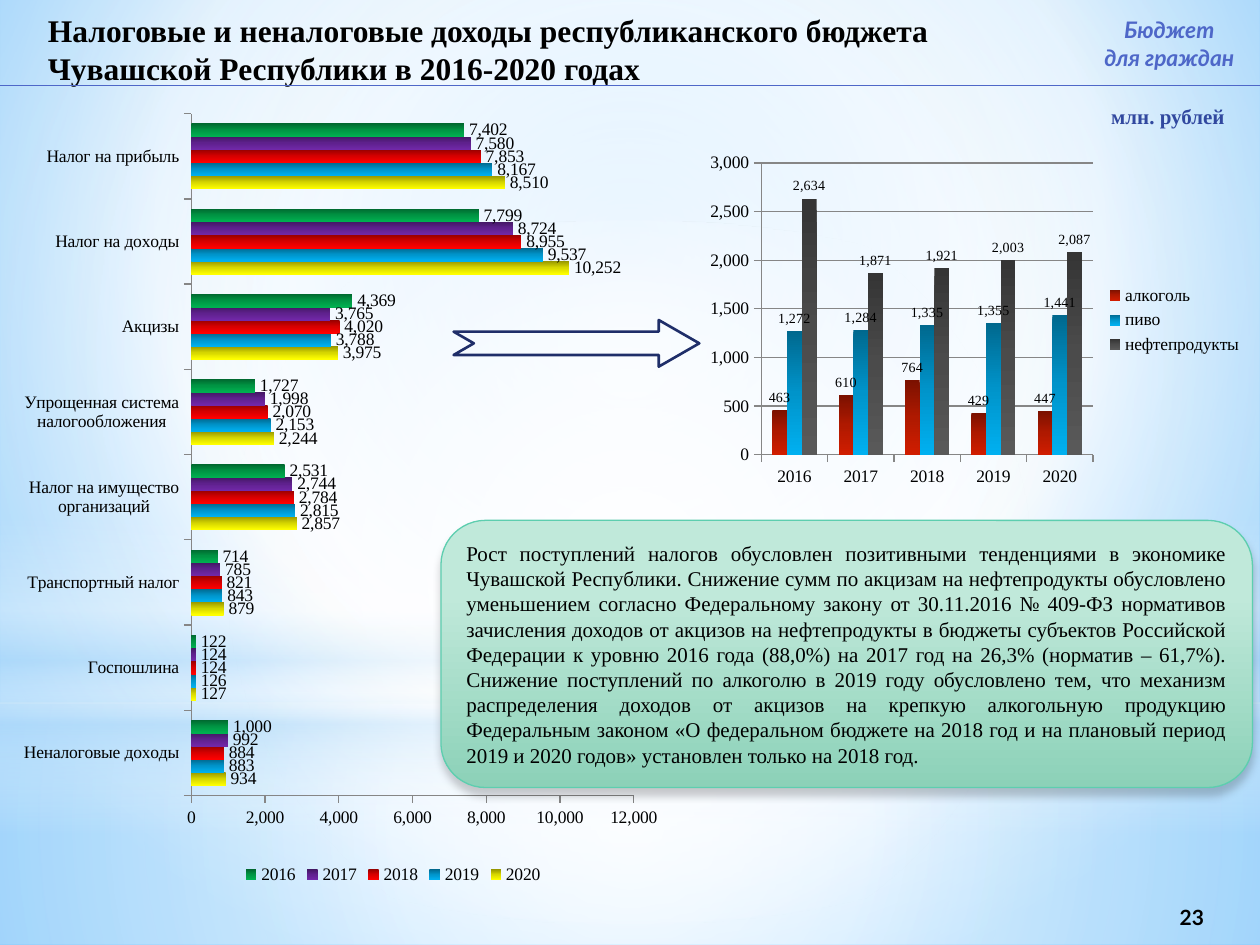
from lxml.etree import SubElement
from pptx import Presentation
from pptx.chart.data import CategoryChartData
from pptx.dml.color import RGBColor
from pptx.enum.chart import XL_CHART_TYPE, XL_LABEL_POSITION, XL_LEGEND_POSITION, XL_TICK_MARK
from pptx.enum.shapes import MSO_CONNECTOR, MSO_SHAPE
from pptx.enum.text import MSO_ANCHOR, MSO_AUTO_SIZE, PP_ALIGN
from pptx.oxml import parse_xml
from pptx.oxml.ns import nsdecls, qn
from pptx.util import Inches, Pt

BLACK = RGBColor(0x00, 0x00, 0x00)
WHITE = RGBColor(0xFF, 0xFF, 0xFF)
GRAY = RGBColor(0x86, 0x86, 0x86)
INDIGO = RGBColor(0x4E, 0x67, 0xC8)
NAVY = RGBColor(0x1F, 0x2E, 0x69)
UNIT_BLUE = RGBColor(0x31, 0x48, 0x9F)
PALE_BLUE = RGBColor(0xB4, 0xDC, 0xFA)
SKY = RGBColor(0x9E, 0xD5, 0xFF)
DEEP_SKY = RGBColor(0x5B, 0xB9, 0xFF)
MINT = RGBColor(0xC0, 0xE9, 0xDA)
DARK_MINT = RGBColor(0x8C, 0xD1, 0xB8)
MINT_LINE = RGBColor(0x5D, 0xCE, 0xAF)
YELLOW = [RGBColor(0x97, 0x97, 0x00), RGBColor(0xD7, 0xD7, 0x00), RGBColor(0xFF, 0xFF, 0x00)]
BLUE = [RGBColor(0x00, 0x68, 0x8E), RGBColor(0x00, 0x94, 0xCA), RGBColor(0x00, 0xB0, 0xF0)]
RED = [RGBColor(0x97, 0x00, 0x00), RGBColor(0xD7, 0x00, 0x00), RGBColor(0xFF, 0x00, 0x00)]
PURPLE = [RGBColor(0x43, 0x17, 0x64), RGBColor(0x5F, 0x21, 0x8E), RGBColor(0x71, 0x28, 0xA8)]
GREEN = [RGBColor(0x00, 0x68, 0x2F), RGBColor(0x00, 0x94, 0x43), RGBColor(0x00, 0xB0, 0x50)]
BRICK = [RGBColor(0x7B, 0x11, 0x00), RGBColor(0xAF, 0x19, 0x00), RGBColor(0xD0, 0x1D, 0x00)]
CHARCOAL = [RGBColor(0x35, 0x35, 0x35), RGBColor(0x4B, 0x4B, 0x4B), RGBColor(0x59, 0x59, 0x59)]
SERIF = "Times New Roman"
SANS = "Lato"
NUMBER_FORMAT = "#,##0"
CENTER = (50, 50, 50, 50)

TAXES = ["Неналоговые доходы", "Госпошлина", "Транспортный налог", "Налог на имущество организаций",
         "Упрощенная система налогообложения", "Акцизы", "Налог на доходы", "Налог на прибыль"]
REVENUE = [
    ("2020", [934, 127, 879, 2857, 2244, 3975, 10252, 8510], YELLOW),
    ("2019", [883, 126, 843, 2815, 2153, 3788, 9537, 8167], BLUE),
    ("2018", [884, 124, 821, 2784, 2070, 4020, 8955, 7853], RED),
    ("2017", [992, 124, 785, 2744, 1998, 3765, 8724, 7580], PURPLE),
    ("2016", [1000, 122, 714, 2531, 1727, 4369, 7799, 7402], GREEN),
]
YEARS = ["2016", "2017", "2018", "2019", "2020"]
EXCISES = [
    ("алкоголь", [463, 610, 764, 429, 447], BRICK),
    ("пиво", [1272, 1284, 1335, 1355, 1441], BLUE),
    ("нефтепродукты", [2634, 1871, 1921, 2003, 2087], CHARCOAL),
]
COMMENT = (
    "Рост поступлений налогов обусловлен позитивными тенденциями в экономике Чувашской Республики. "
    "Снижение сумм по акцизам на нефтепродукты обусловлено уменьшением согласно Федеральному закону "
    "от 30.11.2016 № 409-ФЗ нормативов зачисления доходов от акцизов на нефтепродукты в бюджеты "
    "субъектов Российской Федерации к уровню 2016 года (88,0%) на 2017 год на 26,3% (норматив – 61,7%). "
    "Снижение поступлений по алкоголю в 2019 году обусловлено тем, что механизм распределения доходов "
    "от акцизов на крепкую алкогольную продукцию Федеральным законом «О федеральном бюджете на 2018 год "
    "и на плановый период 2019 и 2020 годов» установлен только на 2018 год."
)


def set_gradient(fill, properties, stops, focus=None):
    fill.solid()
    gradient = parse_xml(f'<a:gradFill {nsdecls("a")} rotWithShape="1"><a:gsLst/></a:gradFill>')
    for position, color, opacity in stops:
        stop = SubElement(gradient[0], qn("a:gs"), pos=str(position * 1000))
        tint = SubElement(stop, qn("a:srgbClr"), val=str(color))
        if opacity < 100:
            SubElement(tint, qn("a:alpha"), val=str(opacity * 1000))
    if focus:
        circle = SubElement(gradient, qn("a:path"), {"path": "circle"})
        sides = {side: str(share * 1000) for side, share in zip("ltrb", focus)}
        SubElement(circle, qn("a:fillToRect"), sides)
    else:
        SubElement(gradient, qn("a:lin"), ang="5400000", scaled="0")
    properties.replace(properties.find(qn("a:solidFill")), gradient)


class SlideBuilder:
    def __init__(self, slide):
        self.slide = slide
        self.shapes = slide.shapes

    def background(self, stops, focus):
        fill = self.slide.background.fill
        fill.solid()
        properties = self.slide._element.find(".//" + qn("p:bgPr"))
        set_gradient(fill, properties, stops, focus)

    def shape(self, kind, box, stops=None, focus=None, line=None, width=0.75):
        shape = self.shapes.add_shape(kind, *map(Inches, box))
        shape.shadow.inherit = False
        if stops:
            set_gradient(shape.fill, shape._element.spPr, stops, focus)
        else:
            shape.fill.background()
        if line is None:
            shape.line.fill.background()
        else:
            shape.line.color.rgb = line
            shape.line.width = Pt(width)
        return shape

    def shadow(self, shape):
        effects = shape._element.spPr.find(qn("a:effectLst"))
        outer = SubElement(effects, qn("a:outerShdw"), blurRad=str(Pt(5)), dist=str(Pt(4)),
                           dir="5400000", rotWithShape="0")
        color = SubElement(outer, qn("a:srgbClr"), val=str(BLACK))
        SubElement(color, qn("a:alpha"), val="20000")

    def fill_text(self, shape, lines, size, color=BLACK, font=SERIF, bold=False, italic=False,
                  align=PP_ALIGN.LEFT, anchor=MSO_ANCHOR.TOP, wrap=True):
        frame = shape.text_frame
        frame.auto_size = MSO_AUTO_SIZE.NONE
        frame.word_wrap = wrap
        frame.vertical_anchor = anchor
        for index, line in enumerate(lines):
            paragraph = frame.add_paragraph() if index else frame.paragraphs[0]
            paragraph.alignment = align
            run = paragraph.add_run()
            run.text = line
            run.font.size = Pt(size)
            run.font.name = font
            run.font.bold = bold
            run.font.italic = italic
            run.font.color.rgb = color

    def text(self, box, lines, size, **style):
        shape = self.shapes.add_textbox(*map(Inches, box))
        self.fill_text(shape, lines, size, **style)
        return shape

    def title(self, box, text, size):
        title = self.shapes.title
        self.shapes._spTree.append(title._element)
        title.left, title.top, title.width, title.height = map(Inches, box)
        self.fill_text(title, [text], size, bold=True)

    def line(self, start, end, color, width):
        connector = self.shapes.add_connector(MSO_CONNECTOR.STRAIGHT, *map(Inches, start + end))
        connector.line.color.rgb = color
        connector.line.width = Pt(width)
        SubElement(connector._element.spPr, qn("a:effectLst"))

    def chart(self, kind, box, categories, series_rows, legend, label_size, grid):
        data = CategoryChartData(number_format=NUMBER_FORMAT)
        data.categories = categories
        for name, values, _ in series_rows:
            data.add_series(name, values)
        chart = self.shapes.add_chart(kind, *map(Inches, box), data).chart
        chart.has_title = False
        chart.font.size = Pt(10)
        chart.font.name = SERIF
        chart.font.color.rgb = BLACK
        chart.has_legend = True
        chart.legend.position = legend
        chart.legend.include_in_layout = False
        for axis in (chart.category_axis, chart.value_axis):
            axis.major_tick_mark = XL_TICK_MARK.OUTSIDE
            axis.minor_tick_mark = XL_TICK_MARK.NONE
            axis.format.line.color.rgb = GRAY
        chart.value_axis.tick_labels.number_format = NUMBER_FORMAT
        chart.value_axis.tick_labels.number_format_is_linked = False
        chart.value_axis.has_major_gridlines = grid
        if grid:
            chart.value_axis.major_gridlines.format.line.color.rgb = GRAY
        plot = chart.plots[0]
        plot.gap_width = 150
        plot.overlap = 0
        plot.vary_by_categories = False
        for series, (_, _, colors) in zip(plot.series, series_rows):
            stops = [(position, color, 100) for position, color in zip((0, 50, 100), colors)]
            set_gradient(series.format.fill, series._element.get_or_add_spPr(), stops)
            labels = series.data_labels
            labels.show_value = True
            labels.position = XL_LABEL_POSITION.OUTSIDE_END
            labels.number_format = NUMBER_FORMAT
            labels.number_format_is_linked = False
            labels.font.size = Pt(label_size)
            labels.font.name = SERIF
            labels.font.color.rgb = BLACK
        return chart

    def plot_area(self, chart, x, y, w, h):
        area = chart._chartSpace.chart.plotArea
        for old in area.findall(qn("c:layout")):
            area.remove(old)
        layout = parse_xml(f'<c:layout {nsdecls("c")}><c:manualLayout/></c:layout>')
        settings = {"layoutTarget": "inner", "xMode": "edge", "yMode": "edge", "x": x, "y": y, "w": w, "h": h}
        for name, value in settings.items():
            SubElement(layout[0], qn(f"c:{name}"), val=str(value))
        area.insert(0, layout)


def main():
    presentation = Presentation()
    presentation.slide_width, presentation.slide_height = Inches(10), Inches(7.5)
    builder = SlideBuilder(presentation.slides.add_slide(presentation.slide_layouts[5]))

    builder.background([(0, SKY, 100), (60, WHITE, 100), (100, DEEP_SKY, 100)], (20, 10, 20, 60))
    builder.shape(MSO_SHAPE.RECTANGLE, (0, 5.58, 10, 1.92),
                  [(0, WHITE, 91), (37, WHITE, 76), (100, PALE_BLUE, 79)], CENTER)
    builder.shape(MSO_SHAPE.RECTANGLE, (0, 0, 10, 5.58),
                  [(0, WHITE, 89), (48, WHITE, 62), (100, PALE_BLUE, 79)], CENTER)
    builder.shape(MSO_SHAPE.RECTANGLE, (0, 4.12, 10, 2.5),
                  [(0, WHITE, 0), (29, WHITE, 30), (45, PALE_BLUE, 40),
                   (55, WHITE, 26), (65, PALE_BLUE, 60), (100, WHITE, 0)])
    builder.shape(MSO_SHAPE.OVAL, (0, 1.75, 10, 5.58), [(0, WHITE, 100), (56, WHITE, 0)], CENTER)

    builder.text((8.91, 7.08, 1.1, 0.4), ["23"], 12, font=SANS, bold=True,
                 align=PP_ALIGN.CENTER, anchor=MSO_ANCHOR.MIDDLE)
    revenue = builder.chart(XL_CHART_TYPE.BAR_CLUSTERED, (0.04, 0.84, 6.16, 6.22), TAXES, REVENUE,
                            XL_LEGEND_POSITION.BOTTOM, 10, False)
    builder.plot_area(revenue, 0.24, 0.01, 0.57, 0.87)
    builder.chart(XL_CHART_TYPE.COLUMN_CLUSTERED, (5.55, 1.16, 4.41, 2.76), YEARS, EXCISES,
                  XL_LEGEND_POSITION.RIGHT, 8, True)
    arrow = builder.shape(MSO_SHAPE.NOTCHED_RIGHT_ARROW, (3.6, 2.54, 1.95, 0.37), line=NAVY, width=1.5)
    arrow.adjustments[1] = 0.87

    builder.title((0.28, 0.04, 7.79, 0.6),
                  "Налоговые и неналоговые доходы республиканского бюджета Чувашской Республики в 2016-2020 годах", 18)
    builder.line((0, 0.68), (10, 0.68), INDIGO, 0.75)
    builder.text((8.61, 0.08, 1.34, 0.54), ["Бюджет", "для граждан"], 13, color=INDIGO, font=SANS,
                 bold=True, italic=True, align=PP_ALIGN.CENTER, wrap=False)
    comment = builder.shape(MSO_SHAPE.ROUNDED_RECTANGLE, (3.5, 4.13, 6.44, 2.12),
                            [(28, MINT, 100), (100, DARK_MINT, 100)], line=MINT_LINE)
    builder.shadow(comment)
    builder.fill_text(comment, [COMMENT], 12, align=PP_ALIGN.JUSTIFY, anchor=MSO_ANCHOR.MIDDLE)
    unit = builder.text((8.38, 0.82, 1.34, 0.24), ["млн. рублей"], 12, color=UNIT_BLUE,
                        bold=True, align=PP_ALIGN.RIGHT)
    frame = unit.text_frame
    frame.margin_left = frame.margin_right = frame.margin_top = frame.margin_bottom = 0
    presentation.save("out.pptx")


if __name__ == "__main__":
    main()
